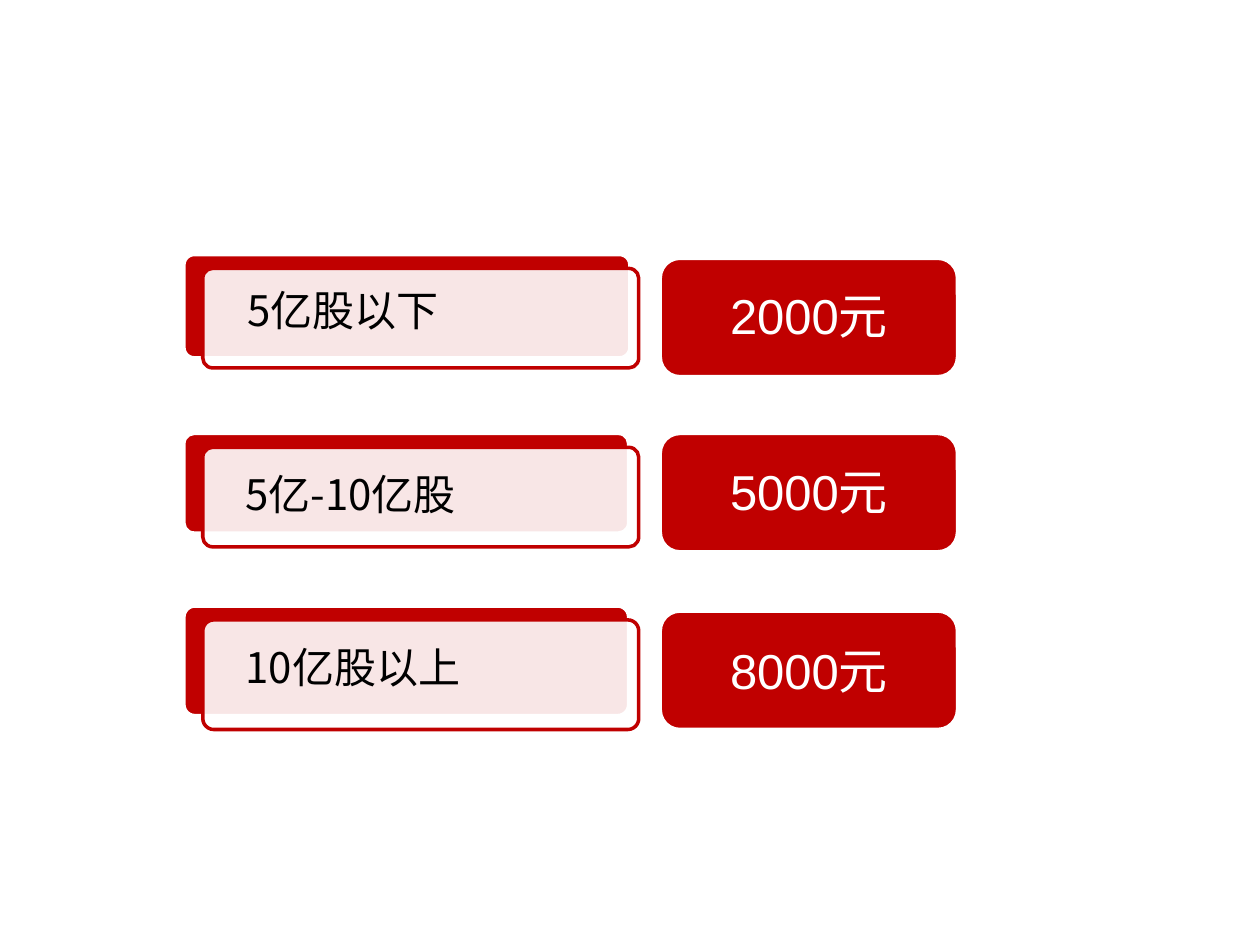
from lxml import etree
from pptx import Presentation
from pptx.dml.color import RGBColor
from pptx.enum import shapes, text
from pptx.oxml import ns
from pptx.util import Pt

PX = 9144  # 100 px to the inch
COLORS = {"red": "C00000", "white": "FFFFFF", "black": "000000"}
CJK_FONT = "Noto Sans CJK SC"
LEFT, PRICE_LEFT = 146, 524
OFFSET_X, OFFSET_Y = 15, 11
LABEL = {"size": Pt(24), "name": CJK_FONT}
PRICE = {"size": Pt(28), "name": "Arial"}


def rgb(name):
    return RGBColor.from_string(COLORS[name])


def emu(*lengths):
    return [n * PX for n in lengths]


def rounded_box(parent, box, fill, line, radius=None, opacity=None):
    s = parent.add_shape(shapes.MSO_SHAPE.ROUNDED_RECTANGLE, *emu(*box))
    s.shadow.inherit = False
    if radius is not None:
        s.adjustments[0] = radius
    s.fill.solid()
    s.fill.fore_color.rgb = rgb(fill)
    s.line.color.rgb = rgb(line)
    s.line.width = Pt(2)
    if opacity is not None:
        color = s._element.spPr.find(ns.qn("a:solidFill"))[0]
        etree.SubElement(color, ns.qn("a:alpha"), val=str(opacity * 1000))
    return s


def text_box(parent, box, words, font, color, align):
    tf = parent.add_textbox(*emu(*box)).text_frame
    tf.word_wrap = True
    p = tf.paragraphs[0]
    p.alignment = align
    r = p.add_run()
    r.text = words
    for key, value in font.items():
        setattr(r.font, key, value)
    r.font.color.rgb = rgb(color)
    etree.SubElement(r._r.get_or_add_rPr(), ns.qn("a:ea"), typeface=CJK_FONT)
    return tf


def share_card(parent, top, back, front_height):
    """White card lying over a red one, shifted right and down."""
    rounded_box(parent, (LEFT, top, *back), "red", "white", 0.1)
    front = (LEFT + OFFSET_X, top + OFFSET_Y, 346, front_height)
    rounded_box(parent, front, "white", "red", 0.1, opacity=90)


def price_card(parent, top, words, text_top, text_height):
    group = parent.add_group_shape().shapes
    rounded_box(group, (PRICE_LEFT, top, 236, 94), "red", "white")
    box = (PRICE_LEFT + 6, top + text_top, 224, text_height)
    tf = text_box(group, box, words, PRICE, "white", text.PP_ALIGN.CENTER)
    frame = {"vertical_anchor": text.MSO_ANCHOR.MIDDLE,
             "margin_left": 12 * PX, "margin_right": 12 * PX,
             "margin_top": 6 * PX, "margin_bottom": 6 * PX}
    for key, value in frame.items():
        setattr(tf, key, value)
    tf.paragraphs[0].line_spacing = 0.9


def share_label(parent, left, top, width, words, align):
    tf = text_box(parent, (left, top, width, 50), words, LABEL, "black", align)
    tf.auto_size = text.MSO_AUTO_SIZE.SHAPE_TO_FIT_TEXT


def main():
    prs = Presentation()
    prs.slide_width, prs.slide_height = emu(1000, 750)
    parts = prs.slides.add_slide(prs.slide_layouts[6]).shapes

    # Share bands: top, size of the back card, height of the front card
    for top, back, front_height in ((202, (354, 82), 79),
                                    (344, (353, 79), 79),
                                    (481, (353, 87), 87)):
        share_card(parts, top, back, front_height)

    # Prices: top, words, text offset and height
    for price in ((205, "2000元", 5, 85),
                  (344, "5000元", 3, 91),
                  (485, "8000元", 4, 91)):
        price_card(parts, *price)

    # Band names
    left, center = text.PP_ALIGN.LEFT, text.PP_ALIGN.CENTER
    for label in ((185, 367, 307, "5亿-10亿股", left),
                  (185, 504, 268, "10亿股以上", left),
                  (138, 221, 268, "5亿股以下", center)):
        share_label(parts, *label)

    prs.save("out.pptx")


if __name__ == "__main__":
    main()
